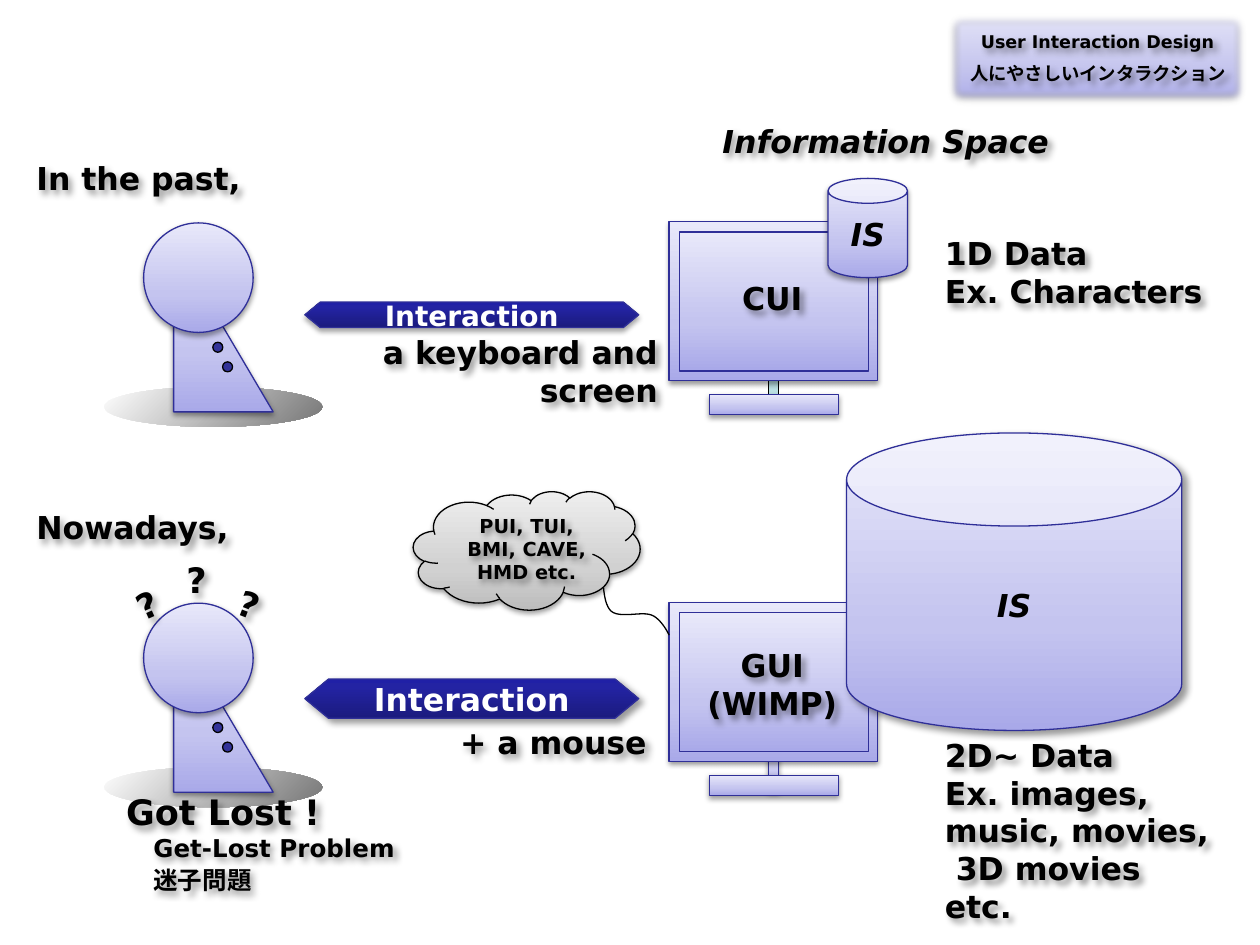
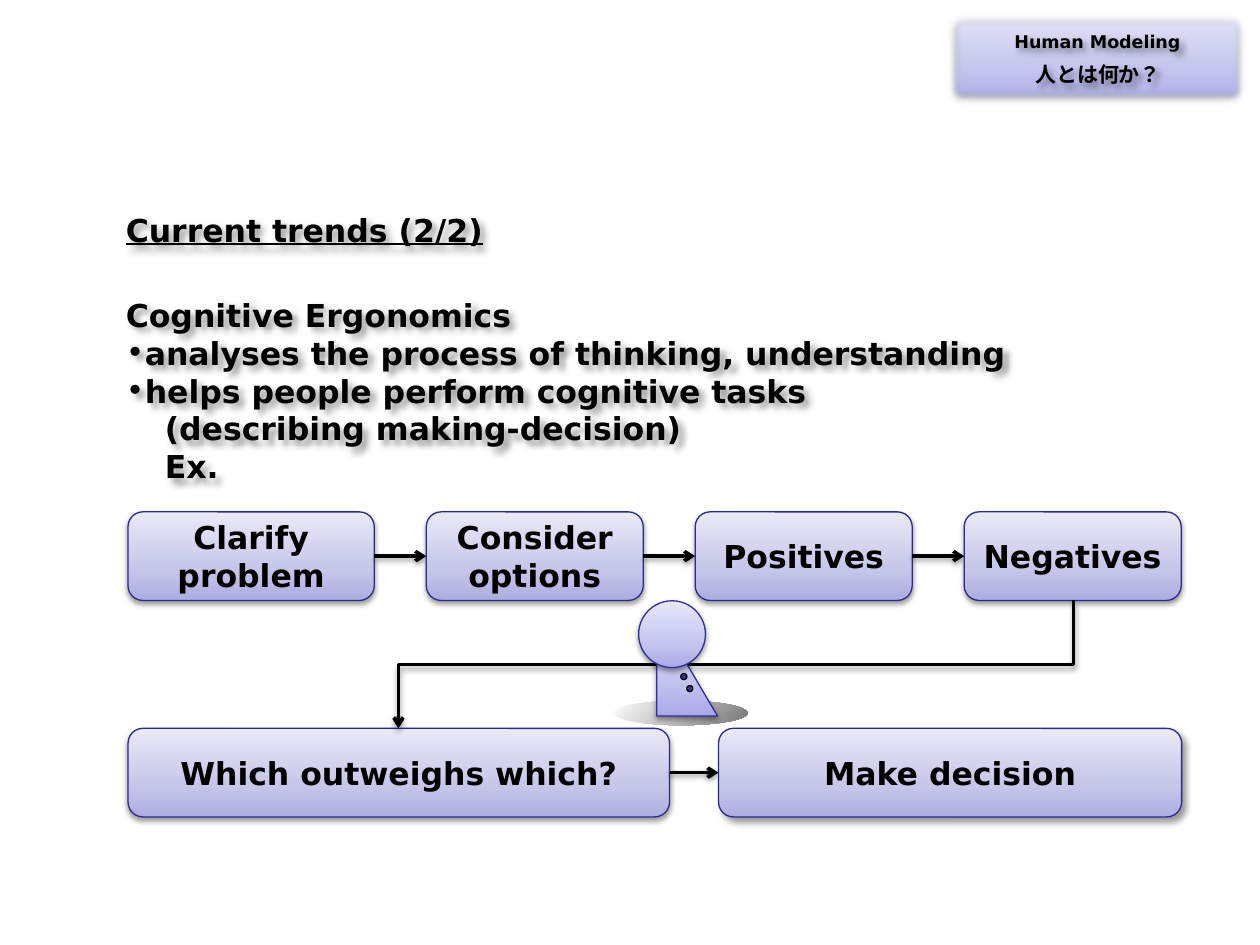
from dataclasses import dataclass
from typing import NamedTuple, Optional

from pptx import Presentation
from pptx.dml.color import RGBColor
from pptx.enum.lang import MSO_LANGUAGE_ID
from pptx.enum.shapes import MSO_CONNECTOR, MSO_SHAPE
from pptx.enum.text import MSO_ANCHOR, PP_ALIGN
from pptx.oxml import parse_xml
from pptx.oxml.ns import nsdecls, qn
from pptx.util import Pt

class Glow(NamedTuple):
    alpha: int
    blur: float
    dist: float
    angle: int

class Grad(NamedTuple):
    stops: tuple
    angle: int = 270

@dataclass(frozen=True)
class Theme:
    font: str = "DejaVu Sans"
    ink: str = "000000"
    white: str = "FFFFFF"
    dot: str = "333399"
    stem: str = "BBE0E3"
    edge: str = "2F2F98"
    rim: str = "2A2A89"
    lilac: Grad = Grad(((0, "A9A9E9"), (35, "C4C4EF"), (100, "E8E8FA")))
    step: Grad = Grad(((0, "ADADE1"), (35, "C6C6E9"), (100, "E9E9F7")))
    navy: Grad = Grad(((0, "1B1B7E"), (80, "2323A3"), (100, "2020A6")))
    grey: Grad = Grad(((0, "BDBDBD"), (35, "D1D1D1"), (100, "EEEEEE")))
    floor: Grad = Grad(((0, "FFFFFF"), (100, "767676")), 45)
    soft: Glow = Glow(38, 3.1, 1.6, 90)
    firm: Glow = Glow(35, 3.1, 1.8, 90)
    cast: Glow = Glow(40, 4, 3, 45)
    body: float = 18
    large: float = 20
    mid: float = 16
    note: float = 14
    cloud: float = 11
    head: float = 10
    hair: float = 0.75
    bold: float = 2
    fade: float = 5

T = Theme()
LEFT, MID, RIGHT = PP_ALIGN.LEFT, PP_ALIGN.CENTER, PP_ALIGN.RIGHT

class Box(NamedTuple):
    x: float
    y: float
    w: float
    h: float

    def emu(self) -> tuple:
        return tuple(Pt(side) for side in self)

    def place(self, x: float, y: float, k: float) -> "Box":
        return Box(x + self.x * k, y + self.y * k, self.w * k, self.h * k)

class Para(NamedTuple):
    text: str
    indent: float = 0
    bullet: str = ""

class Style(NamedTuple):
    size: float = T.body
    align: PP_ALIGN = LEFT
    color: str = T.ink
    italic: bool = False
    under: bool = False
    space: Optional[float] = None
    wrap: bool = True

class Part(NamedTuple):
    kind: MSO_SHAPE
    box: Box
    fill: object
    line: str = T.edge
    glow: Optional[Glow] = T.soft
    fade: float = 0

PERSON = (
    Part(MSO_SHAPE.OVAL, Box(0, 93.6, 124.6, 23), T.floor, "", None),
    Part(MSO_SHAPE.RIGHT_TRIANGLE, Box(39.6, 11.5, 56.9, 96.5), T.lilac),
    Part(MSO_SHAPE.OVAL, Box(22.5, 0, 62.6, 62.6), T.lilac),
    Part(MSO_SHAPE.OVAL, Box(62, 68.2, 5.7, 5.7), T.dot, T.ink, None),
    Part(MSO_SHAPE.OVAL, Box(67.6, 79.4, 5.7, 5.7), T.dot, T.ink, None),
)
STEM = Part(MSO_SHAPE.RECTANGLE, Box(56.8, 84.8, 5.7, 22.5), T.lilac)
SCREEN = (
    Part(MSO_SHAPE.RECTANGLE, Box(0, 0, 119, 90.7), T.lilac),
    Part(MSO_SHAPE.RECTANGLE, Box(5.8, 5.8, 108, 79.4), T.lilac, T.edge, None),
    Part(MSO_SHAPE.RECTANGLE, Box(23, 98.7, 73.6, 11.5), T.lilac),
)

def add_glow(props, glow: Glow) -> None:
    props.find(qn("a:effectLst")).append(parse_xml(
        f'<a:outerShdw {nsdecls("a")} blurRad="{Pt(glow.blur)}" dist="{Pt(glow.dist)}" '
        f'dir="{glow.angle * 60000}" rotWithShape="0"><a:srgbClr val="{T.ink}">'
        f'<a:alpha val="{glow.alpha * 1000}"/></a:srgbClr></a:outerShdw>'))

def set_grad(shape, grad: Grad) -> None:
    shape.fill.background()
    props = shape._element.spPr
    stops = "".join(f'<a:gs pos="{pos * 1000}"><a:srgbClr val="{tone}"/></a:gs>'
                    for pos, tone in grad.stops)
    props.replace(props.find(qn("a:noFill")), parse_xml(
        f'<a:gradFill {nsdecls("a")} rotWithShape="1"><a:gsLst>{stops}</a:gsLst>'
        f'<a:lin ang="{grad.angle * 60000}" scaled="0"/></a:gradFill>'))

def set_line(line, tone: str, width: float = T.hair) -> None:
    line.color.rgb = RGBColor.from_string(tone)
    line.width = Pt(width)

def set_indent(para, item: Para) -> None:
    props = para._p.get_or_add_pPr()
    props.set("marL", str(Pt(item.indent)))
    if item.bullet:
        props.set("indent", str(-Pt(item.indent)))
        props.append(parse_xml(f'<a:buFont {nsdecls("a")} typeface="{T.font}"/>'))
        props.append(parse_xml(f'<a:buChar {nsdecls("a")} char="{item.bullet}"/>'))

def write(frame, paras: tuple, style: Style) -> None:
    frame.word_wrap = style.wrap
    for i, item in enumerate(paras):
        item = Para(item) if isinstance(item, str) else item
        para = frame.add_paragraph() if i else frame.paragraphs[0]
        para.alignment = style.align
        if style.space:
            para.line_spacing = style.space
        if item.indent:
            set_indent(para, item)
        run = para.add_run()
        run.text = item.text
        font = run.font
        font.name, font.size, font.bold = T.font, Pt(style.size), True
        font.italic, font.underline = style.italic, style.under
        font.color.rgb = RGBColor.from_string(style.color)
        if not item.text.isascii():
            font.language_id = MSO_LANGUAGE_ID.JAPANESE

def label(slide, box: Box, *paras, turn: float = 0, **look) -> None:
    shape = slide.shapes.add_textbox(*box.emu())
    shape.rotation = turn
    shape.fill.background()
    shape.shadow.inherit = False
    add_glow(shape._element.spPr, T.cast)
    write(shape.text_frame, paras, Style(**look))

def draw(slide, part: Part, text: str = "", adjust: tuple = (), **look) -> None:
    shape = slide.shapes.add_shape(part.kind, *part.box.emu())
    for i, value in enumerate(adjust):
        shape.adjustments[i] = value
    if isinstance(part.fill, Grad):
        set_grad(shape, part.fill)
    else:
        shape.fill.solid()
        shape.fill.fore_color.rgb = RGBColor.from_string(part.fill)
    if part.line:
        set_line(shape.line, part.line)
    else:
        shape.line.fill.background()
    shape.shadow.inherit = False
    props = shape._element.spPr
    if part.glow:
        add_glow(props, part.glow)
    if part.fade:
        props.find(qn("a:effectLst")).append(
            parse_xml(f'<a:softEdge {nsdecls("a")} rad="{Pt(part.fade)}"/>'))
    if text:
        shape.text_frame.vertical_anchor = MSO_ANCHOR.MIDDLE
        write(shape.text_frame, (text,), Style(align=MID, **look))

def stack(slide, parts: tuple, x: float, y: float, k: float = 1) -> None:
    for part in parts:
        draw(slide, part._replace(box=part.box.place(x, y, k)))

def arrow(slide, x: float, y: float, end: float, drop: float = 0) -> None:
    kind, spots = MSO_CONNECTOR.STRAIGHT, (x, y, end, y)
    if drop:
        mid, high = (x + end) / 2, x - end
        left, top = mid - drop / 2, y + (drop - high) / 2
        kind, spots = MSO_CONNECTOR.ELBOW, (left, top, left + drop, top + high)
    line = slide.shapes.add_connector(kind, *map(Pt, spots))
    set_line(line.line, T.ink, T.bold)
    props = line._element.spPr
    if drop:
        props.find(qn("a:xfrm")).set("rot", str(90 * 60000))
    props.find(qn("a:ln")).append(parse_xml(f'<a:tailEnd {nsdecls("a")} type="arrow"/>'))
    props.append(parse_xml(f'<a:effectLst {nsdecls("a")}/>'))
    add_glow(props, T.soft)

def curve(slide, here: tuple, bends: tuple) -> None:
    path = slide.shapes.build_freeform(*map(Pt, here))
    for bend in bends:
        spots = []
        for t in (i / 12 for i in range(1, 13)):
            mix = ((1 - t) ** 3, 3 * t * (1 - t) ** 2, 3 * t * t * (1 - t), t ** 3)
            spots.append(tuple(Pt(sum(m * v for m, v in zip(mix, axis)))
                               for axis in zip(here, *bend)))
        path.add_line_segments(spots, close=False)
        here = bend[-1]
    shape = path.convert_to_shape()
    shape.fill.background()
    set_line(shape.line, T.ink)
    shape.shadow.inherit = False

def header(slide, title: str, local: str, size: float) -> None:
    draw(slide, Part(MSO_SHAPE.RECTANGLE, Box(540, 5.8, 173.5, 54.7), T.lilac, "", fade=T.fade))
    label(slide, Box(540, 14.4, 174.2, 19.4), title, size=T.head, align=MID)
    label(slide, Box(543.6, 34.6, 167.8, 18), local, size=size, align=MID, space=0.8)

def past(slide) -> None:
    label(slide, Box(191.5, 187, 191.5, 51.1), "a keyboard and", "screen", align=RIGHT)
    label(slide, Box(532.8, 130.3, 170, 51.1), "1D Data", "Ex. Characters")
    label(slide, Box(13.7, 87.1, 233.3, 28.8), "In the past,")
    label(slide, Box(388, 66, 236.2, 28.8), "Information Space", align=MID, italic=True)
    stack(slide, PERSON, 59.6, 127.4)
    stack(slide, (STEM._replace(fill=T.stem, line=T.ink, glow=None),) + SCREEN, 382.4, 126.8)
    label(slide, Box(388, 156.2, 106.6, 28.8), "CUI", align=MID)
    draw(slide, Part(MSO_SHAPE.LEFT_RIGHT_ARROW, Box(174.2, 172.6, 190.8, 14.6), T.navy, glow=T.firm),
         "Interaction", (1, 0.604), size=T.mid, color=T.white, wrap=False)
    draw(slide, Part(MSO_SHAPE.CAN, Box(473.2, 102, 45.4, 56.7), T.lilac),
         "IS", (0.313,), italic=True, wrap=False)

def today(slide) -> None:
    label(slide, Box(196.6, 409.7, 180, 28.8), "+ a mouse", align=RIGHT)
    label(slide, Box(532.8, 416.9, 170, 94.3), "2D~ Data", "Ex. images, music, movies,",
          Para("3D movies", 6.3), "etc.")
    stack(slide, PERSON, 59.6, 344.7)
    draw(slide, Part(MSO_SHAPE.LEFT_RIGHT_ARROW, Box(174.2, 388, 190.8, 22.5), T.navy, glow=T.cast),
         "Interaction", (1, 0.604), color=T.white, wrap=False)
    stack(slide, (STEM,) + SCREEN, 382.4, 344.3)
    label(slide, Box(388, 365.8, 106.6, 51.1), "GUI", "(WIMP)", align=MID)
    draw(slide, Part(MSO_SHAPE.CAN, Box(483.8, 247.4, 191.5, 170), T.lilac, glow=T.cast),
         "IS", (0.313,), italic=True, wrap=False)
    curve(slide, (344.2, 326.2), (
        ((344.9, 335.5), (344.9, 344.9), (349.2, 349.2)),
        ((354.2, 353.5), (366.5, 349.2), (372.2, 351.4)),
        ((378, 353.5), (382.4, 362.9), (382.4, 362.9))))
    draw(slide, Part(MSO_SHAPE.CLOUD, Box(236.2, 280.8, 129.6, 67.7), T.grey, T.ink))
    label(slide, Box(236.2, 290.2, 129.6, 47.5), "PUI, TUI,", "BMI, CAVE,", "HMD etc.",
          size=T.cloud, align=MID)
    header(slide, "User Interaction Design", "人にやさしいインタラクション", 10.5)

def lost(slide) -> None:
    label(slide, Box(13.7, 287, 216, 28.8), "Nowadays,")
    for x, y, turn in ((70.6, 329.8, 335.9), (128.9, 329.8, 21.1), (99, 315.8, 0)):
        label(slide, Box(x, y, 26.6, 31), "?", turn=turn, size=T.large, align=MID, wrap=False)
    label(slide, Box(42.5, 448.3, 170, 31), "Got Lost !", size=T.large, align=MID)
    for y, text in ((472.3, "Get-Lost Problem"), (491, "迷子問題")):
        label(slide, Box(80.6, y, 167, 24.5), text, size=T.note)

def trends(slide) -> None:
    header(slide, "Human Modeling", "人とは何か？", 12)
    label(slide, Box(64.8, 165.6, 559.4, 116.6), "Cognitive Ergonomics",
          Para("analyses the process of thinking, understanding", 10.9, "•"),
          Para("helps people perform cognitive tasks", 10.9, "•"),
          Para("(describing making-decision)", 22.3), Para("Ex.", 22.3))
    label(slide, Box(64.8, 117, 408.2, 28.8), "Current trends (2/2)", under=True)
    high, top, low = 50.6, 292.5, 416.2
    rows = (
        (top, 29.7, (("Clarify problem", 140.7, T.soft), ("Consider options", 124, T.soft),
                     ("Positives", 124, T.soft), ("Negatives", 124, T.soft))),
        (low, 28, (("Which outweighs which?", 309.4, T.soft), ("Make decision", 264.6, T.cast))),
    )
    for y, gap, cells in rows:
        x = 73.2
        for i, (text, wide, glow) in enumerate(cells):
            if i:
                arrow(slide, x - gap, y + high / 2, x)
            box = Box(x, y, wide, high)
            draw(slide, Part(MSO_SHAPE.ROUNDED_RECTANGLE, box, T.step, T.rim, glow), text)
            x += wide + gap
    arrow(slide, 613.4, top + high, 227.7, low - top - high)
    stack(slide, PERSON, 351.2, 343.3, 0.61)

def main() -> None:
    deck = Presentation()
    deck.slide_width, deck.slide_height = Pt(720), Pt(540)
    for scenes in ((past, today, lost), (trends,)):
        slide = deck.slides.add_slide(deck.slide_layouts[6])
        for scene in scenes:
            scene(slide)
    deck.save("out.pptx")

if __name__ == "__main__":
    main()
